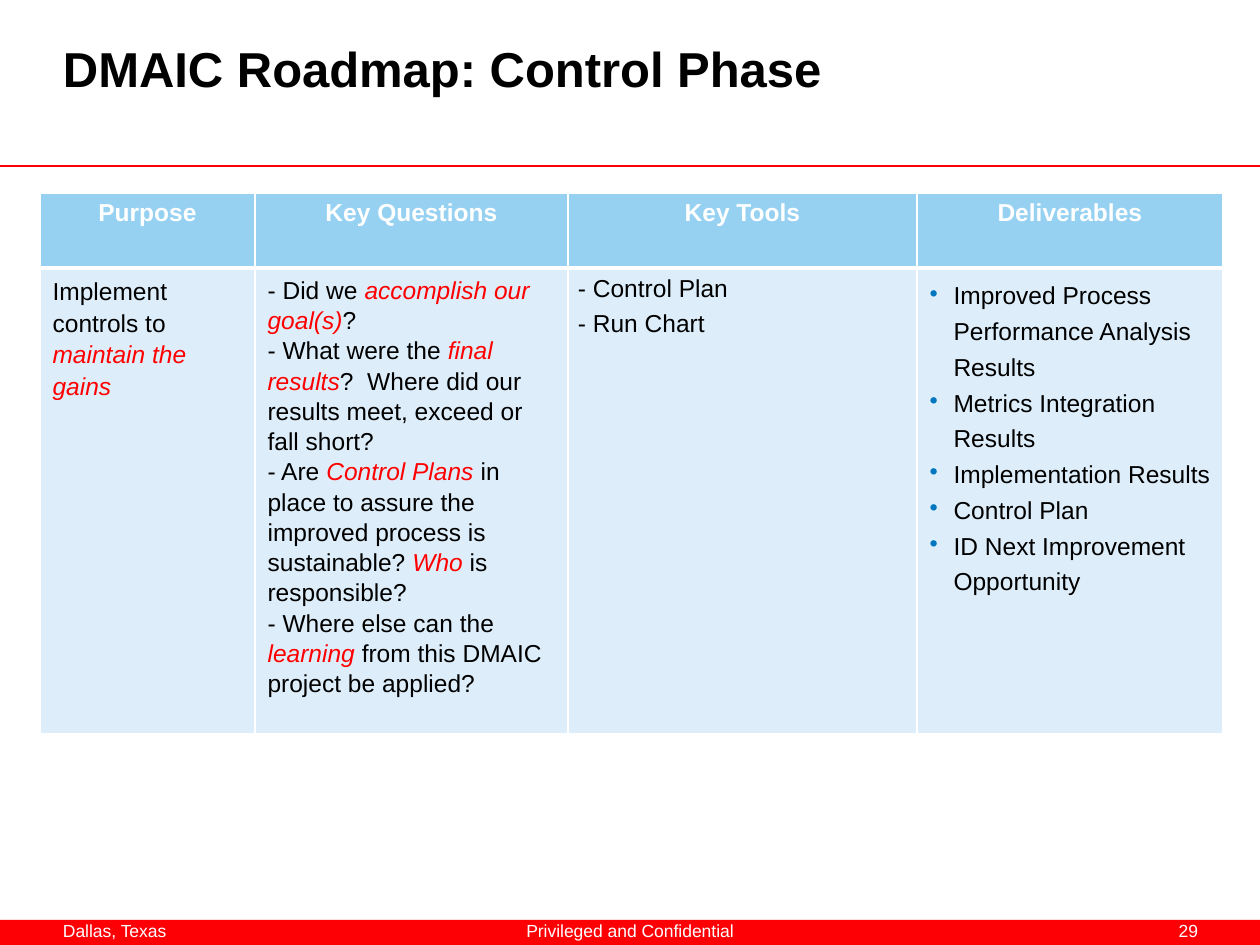
from dataclasses import dataclass

from lxml import etree
from pptx import Presentation
from pptx.dml.color import RGBColor
from pptx.enum.shapes import MSO_CONNECTOR, MSO_SHAPE
from pptx.enum.text import PP_ALIGN
from pptx.oxml.ns import qn
from pptx.util import Emu, Pt

LEFT, CENTER, RIGHT = PP_ALIGN.LEFT, PP_ALIGN.CENTER, PP_ALIGN.RIGHT
RECTANGLE = MSO_SHAPE.RECTANGLE
STRAIGHT = MSO_CONNECTOR.STRAIGHT

FONT = "Arial"
PIXELS_PER_INCH = 126
COLORS = {
    "black": "000000",
    "white": "FFFFFF",
    "brand": "FC0006",
    "emphasis": "FF0000",
    "header": "96D1F2",
    "body": "DDEEFA",
    "bullet": "0076BE",
}
INDENT = 24


@dataclass(frozen=True)
class Label:
    text: str
    left: int
    top: int
    width: int
    height: int
    size: int = 10
    color: str = "white"
    bold: bool = False
    align: PP_ALIGN = LEFT


@dataclass(frozen=True)
class Column:
    heading: str
    width: int
    paragraphs: tuple[str, ...] = ()
    spacing: float = 1.0
    bulleted: bool = False


LABELS = [
    Label("Dallas, Texas", 63, 920, 150, 26),
    Label("29", 1091, 920, 107, 25, align=RIGHT),
    Label("Privileged and Confidential", 480, 920, 300, 25, align=CENTER),
    Label("DMAIC Roadmap: Control Phase", 63, 38, 1134, 130, 28, "black", True),
]

COLUMNS = [
    Column("Purpose", 215, ("Implement controls to *maintain the gains*",), 1.15),
    Column("Key Questions", 313, (
        "- Did we *accomplish our goal(s)*?",
        "- What were the *final results*?  Where did our results meet, exceed or fall short?",
        "- Are *Control Plans* in place to assure the improved process is sustainable? "
        "*Who* is responsible?",
        "- Where else can the *learning* from this DMAIC project be applied?",
    ), 1.1),
    Column("Key Tools", 349),
    Column("Deliverables", 306, (
        "Improved Process Performance Analysis Results",
        "Metrics Integration Results",
        "Implementation Results",
        "Control Plan",
        "ID Next Improvement Opportunity",
    ), 1.3, True),
]
TOOLS = ("- Control Plan", "- Run Chart")


def px(length: int) -> Emu:
    return Emu(round(length * 914400 / PIXELS_PER_INCH))


def rgb(name: str) -> RGBColor:
    return RGBColor.from_string(COLORS[name])


def add_bullet(paragraph) -> None:
    properties = paragraph._p.get_or_add_pPr()
    properties.set("marL", str(px(INDENT)))
    properties.set("indent", str(-px(INDENT)))
    color = etree.SubElement(properties, qn("a:buClr"))
    etree.SubElement(color, qn("a:srgbClr"), val=COLORS["bullet"])
    etree.SubElement(properties, qn("a:buChar"), char="•")


def write_text(frame, paragraphs: tuple[str, ...], *, size: int = 14,
               color: str = "black", bold: bool = False, align: PP_ALIGN = LEFT,
               spacing: float = 1.0, gap: float = 0, bulleted: bool = False) -> None:
    frame.word_wrap = True
    for index, text in enumerate(paragraphs):
        paragraph = frame.add_paragraph() if index else frame.paragraphs[0]
        if bulleted:
            add_bullet(paragraph)
        paragraph.alignment = align
        paragraph.line_spacing = spacing
        if index and gap:
            paragraph.space_before = Pt(gap)
        for position, part in enumerate(text.split("*")):
            emphasized = position % 2 == 1
            if not part:
                continue
            run = paragraph.add_run()
            run.text = part
            run.font.name = FONT
            run.font.size = Pt(size)
            run.font.bold = bold
            run.font.italic = emphasized
            run.font.color.rgb = rgb("emphasis" if emphasized else color)


def add_text_box(slide, left: int, top: int, width: int, height: int,
                 margins: tuple[int, int] = (0, 0)):
    shape = slide.shapes.add_textbox(px(left), px(top), px(width), px(height))
    frame = shape.text_frame
    frame.margin_left = frame.margin_right = px(margins[0])
    frame.margin_top = frame.margin_bottom = px(margins[1])
    return frame


def add_label(slide, label: Label) -> None:
    frame = add_text_box(slide, label.left, label.top, label.width, label.height)
    write_text(frame, (label.text,), size=label.size, color=label.color,
               bold=label.bold, align=label.align)


def style_cell(cell, fill: str, top: int, bottom: int) -> None:
    cell.fill.solid()
    cell.fill.fore_color.rgb = rgb(fill)
    properties = cell._tc.get_or_add_tcPr()
    borders = {"a:lnL": 1, "a:lnR": 1, "a:lnT": top, "a:lnB": bottom}
    for index, (tag, width) in enumerate(borders.items()):
        line = etree.Element(qn(tag), w=str(Pt(width)))
        solid = etree.SubElement(line, qn("a:solidFill"))
        etree.SubElement(solid, qn("a:srgbClr"), val=COLORS["white"])
        properties.insert(index, line)


def add_roadmap(slide, left: int, top: int, heights: tuple[int, int]) -> None:
    width = sum(column.width for column in COLUMNS)
    table = slide.shapes.add_table(len(heights), len(COLUMNS), px(left), px(top),
                                   px(width), px(sum(heights))).table
    for row, height in zip(table.rows, heights):
        row.height = px(height)
    for index, column in enumerate(COLUMNS):
        table.columns[index].width = px(column.width)
        header, body = table.cell(0, index), table.cell(1, index)
        style_cell(header, "header", 1, 3)
        style_cell(body, "body", 3, 1)
        write_text(header.text_frame, (column.heading,), color="white",
                   bold=True, align=CENTER)
        write_text(body.text_frame, column.paragraphs, spacing=column.spacing,
                   bulleted=column.bulleted)


def add_frame(slide) -> None:
    footer = slide.shapes.add_shape(RECTANGLE, 0, px(920), px(1260), px(25))
    footer.shadow.inherit = False
    footer.fill.solid()
    footer.fill.fore_color.rgb = rgb("brand")
    footer.line.fill.background()
    rule = slide.shapes.add_connector(STRAIGHT, 0, px(166), px(1260), px(166))
    rule.line.color.rgb = rgb("brand")
    rule.line.width = Pt(1)
    etree.SubElement(rule._element.spPr, qn("a:effectLst"))


def main() -> None:
    presentation = Presentation()
    presentation.slide_width, presentation.slide_height = px(1260), px(945)
    slide = presentation.slides.add_slide(presentation.slide_layouts[6])
    add_frame(slide)
    for label in LABELS:
        add_label(slide, label)
    add_roadmap(slide, 40, 193, (75, 436))
    tools = add_text_box(slide, 570, 266, 340, 106, margins=(8, 4))
    write_text(tools, TOOLS, spacing=1.1, gap=1.6)
    presentation.save("out.pptx")


if __name__ == "__main__":
    main()
